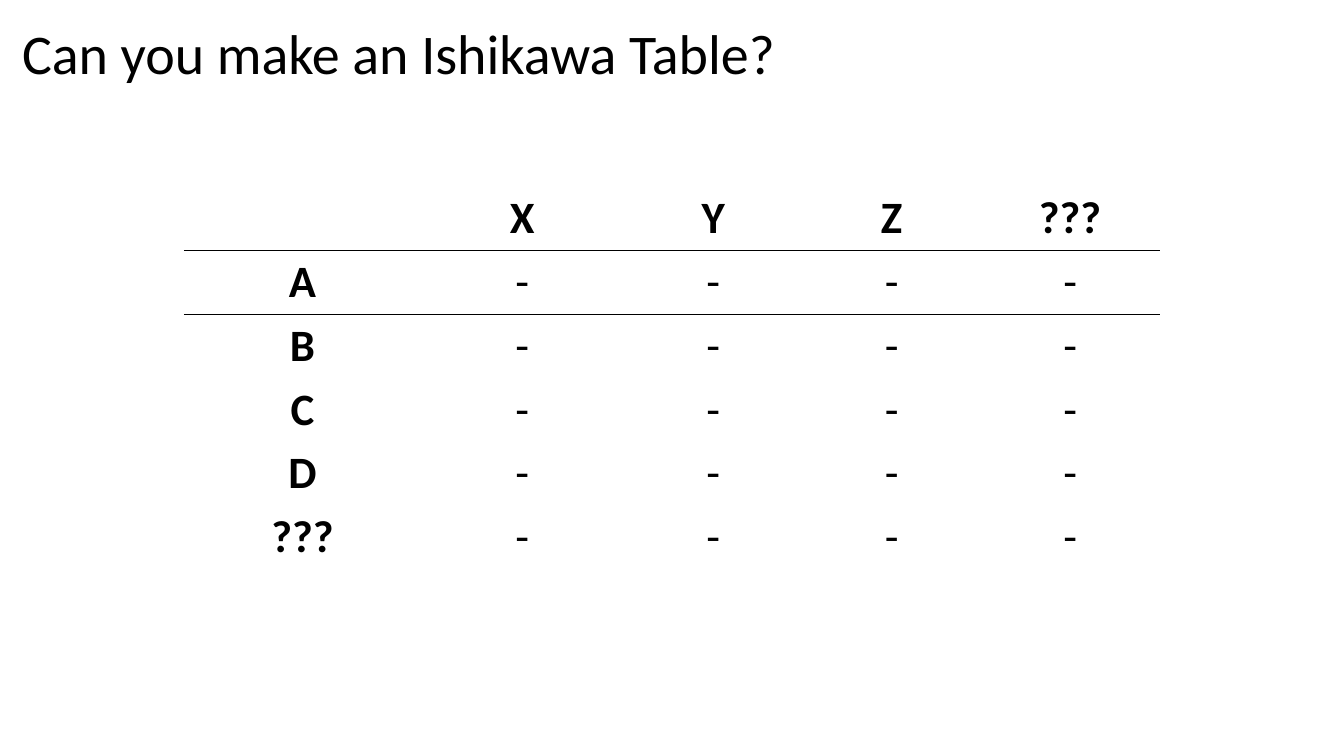
from dataclasses import dataclass

from lxml import etree
from pptx import Presentation
from pptx import util as u
from pptx.dml import color
from pptx.enum import text
from pptx.oxml import ns

FONT = "Calibri"
BLACK = "000000"
HEADERS = ["", "X", "Y", "Z", "???"]
ROW_LABELS = ["A", "B", "C", "D", "???"]
COL_WIDTHS = [2.34, 2.02, 1.77, 1.77, 1.77]
TABLE_LEFT, TABLE_TOP, TABLE_HEIGHT = 1.83, 1.85, 3.8
# Sides of the cells in a row that carry a rule, bottom before top
RULED_SIDES = {0: ["lnB"], 1: ["lnB", "lnT"], 2: ["lnT"]}


@dataclass
class Label:
    content: str
    size: int
    bold: bool = False
    align: text.PP_ALIGN = text.PP_ALIGN.LEFT


def rgb(value: str) -> color.RGBColor:
    return color.RGBColor.from_string(value)


def write(tf, label: Label) -> None:
    p = tf.paragraphs[0]
    p.alignment = label.align
    r = p.add_run()
    r.text = label.content
    formats = {"name": FONT, "size": u.Pt(label.size), "bold": label.bold}
    for name, value in formats.items():
        setattr(r.font, name, value)
    r.font.color.rgb = rgb(BLACK)


def add_rule(cell, side: str) -> None:
    """Draw a 1 pt black border; borders precede the fill in the cell's XML."""
    ln = etree.Element(ns.qn(f"a:{side}"), w=str(u.Pt(1)))
    fill = etree.SubElement(ln, ns.qn("a:solidFill"))
    etree.SubElement(fill, ns.qn("a:srgbClr"), val=BLACK)
    cell._tc.get_or_add_tcPr().insert(0, ln)


def add_title(s) -> None:
    box = [u.Inches(v) for v in (0.12, 0.13, 9.79, 0.77)]
    tf = s.shapes.add_textbox(*box).text_frame
    tf.word_wrap = True
    tf.auto_size = text.MSO_AUTO_SIZE.SHAPE_TO_FIT_TEXT
    write(tf, Label("Can you make an Ishikawa Table?", 40))


def add_ishikawa_table(s) -> None:
    rows = [HEADERS] + [[name] + ["-"] * (len(HEADERS) - 1) for name in ROW_LABELS]
    box = [u.Inches(v) for v in (TABLE_LEFT, TABLE_TOP, sum(COL_WIDTHS), TABLE_HEIGHT)]
    table = s.shapes.add_table(len(rows), len(HEADERS), *box).table
    table.first_row = table.horz_banding = False
    for column, width in zip(table.columns, COL_WIDTHS):
        column.width = u.Inches(width)
    cell_format = {
        "margin_top": u.Inches(0.04),
        "margin_bottom": u.Inches(0.04),
        "vertical_anchor": text.MSO_ANCHOR.MIDDLE,
    }
    for i, row in enumerate(rows):
        for j, content in enumerate(row):
            cell = table.cell(i, j)
            for name, value in cell_format.items():
                setattr(cell, name, value)
            cell.fill.background()
            for side in RULED_SIDES.get(i, []):
                add_rule(cell, side)
            if content:
                bold = i == 0 or j == 0
                write(cell.text_frame, Label(content, 32, bold, text.PP_ALIGN.CENTER))


def main() -> None:
    prs = Presentation()
    prs.slide_width, prs.slide_height = u.Inches(13.33), u.Inches(7.5)
    s = prs.slides.add_slide(prs.slide_layouts[6])
    add_title(s)
    add_ishikawa_table(s)
    prs.save("out.pptx")


if __name__ == "__main__":
    main()
